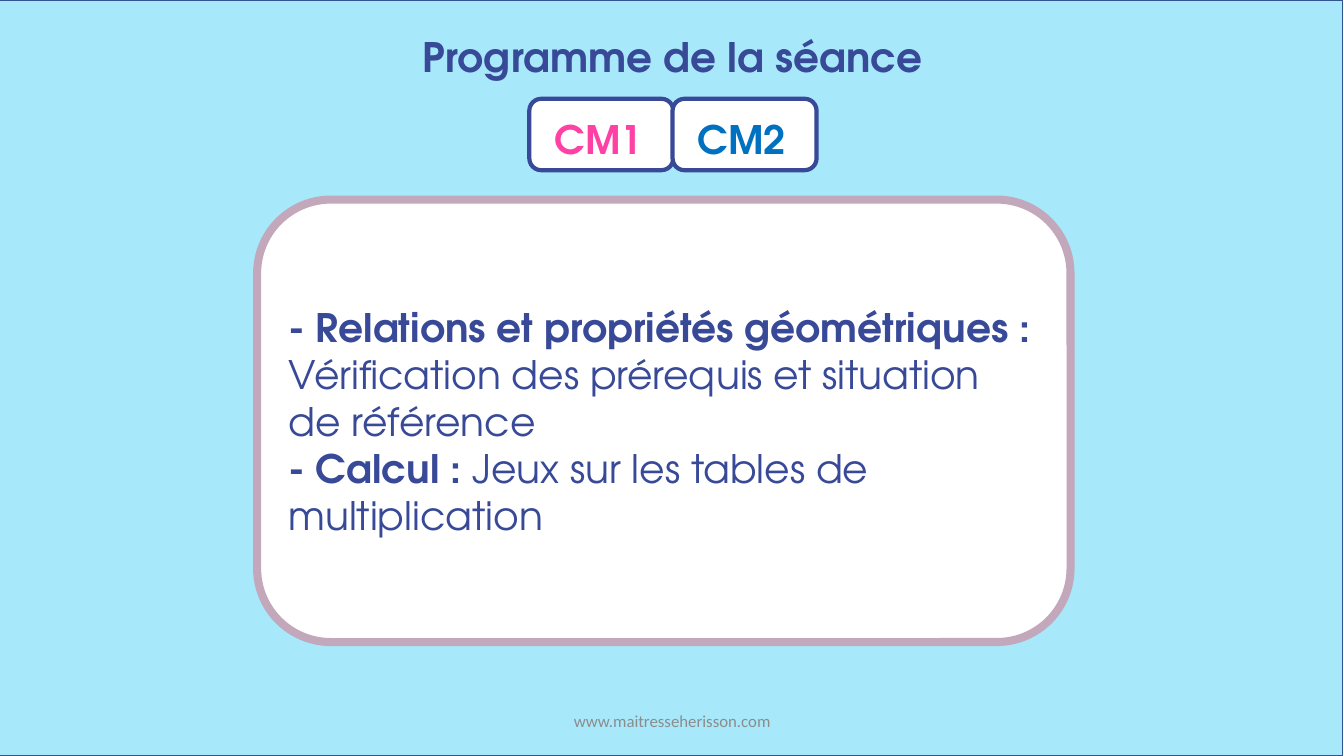
from pptx import Presentation
from pptx.dml.color import RGBColor
from pptx.enum.shapes import MSO_SHAPE as SHAPE
from pptx.enum.text import MSO_ANCHOR as ANCHOR, PP_ALIGN as ALIGN
from pptx.util import Cm, Pt

SKY = RGBColor(0xA7, 0xE8, 0xFB)
EDGE = RGBColor(0x32, 0x54, 0x91)
WHITE = RGBColor(0xFF, 0xFF, 0xFF)
INDIGO = RGBColor(0x37, 0x49, 0x97)
MAUVE = RGBColor(0xC3, 0xA7, 0xBA)
PINK = RGBColor(0xFF, 0x41, 0xA5)
BLUE = RGBColor(0x00, 0x70, 0xC0)
GREY = RGBColor(0x8C, 0x8C, 0x8C)
ADVENTOR = "TeX Gyre Adventor"

LEVELS = [("CM1", PINK), ("CM2", BLUE)]
PROGRAMME = [
    ("- Relations et propriétés géométriques : ",
     "Vérification des prérequis et situation de référence"),
    ("- Calcul : ", "Jeux sur les tables de multiplication"),
]


def add_panel(s, kind, box, fill, line, width):
    """Add a filled, outlined shape without shadow."""
    sp = s.shapes.add_shape(kind, *map(Cm, box))
    sp.shadow.inherit = False
    sp.fill.solid()
    sp.fill.fore_color.rgb = fill
    sp.line.color.rgb = line
    sp.line.width = Pt(width)
    return sp


def add_run(p, text, size, color, bold=True, font=ADVENTOR):
    """Add one formatted run to a paragraph."""
    r = p.add_run()
    r.text = text
    r.font.name = font
    r.font.size = Pt(size)
    r.font.bold = bold
    r.font.color.rgb = color


def add_label(s, box, text, size, color, align=ALIGN.LEFT, anchor=ANCHOR.TOP, **style):
    """Add a text box holding a single line."""
    tf = s.shapes.add_textbox(*map(Cm, box)).text_frame
    tf.word_wrap = True
    tf.vertical_anchor = anchor
    p = tf.paragraphs[0]
    p.alignment = align
    add_run(p, text, size, color, **style)


def add_level(s, left, name, color):
    """Add a class level badge."""
    add_panel(s, SHAPE.ROUNDED_RECTANGLE, (left, 2.49, 3.63, 1.8), WHITE, INDIGO, 3)
    add_label(s, (left + 0.39, 2.77, 2.8, 1.45), name, 28, color)


def add_programme(s, items):
    """Add the rounded panel listing each subject and its activity."""
    sp = add_panel(s, SHAPE.ROUNDED_RECTANGLE, (6.48, 5.03, 20.5, 11.15), WHITE, MAUVE, 5.75)
    tf = sp.text_frame
    tf.word_wrap = True
    tf.vertical_anchor = ANCHOR.MIDDLE
    for i, (subject, activity) in enumerate(items):
        p = tf.add_paragraph() if i else tf.paragraphs[0]
        p.alignment = ALIGN.LEFT
        add_run(p, subject, 28, INDIGO)
        add_run(p, activity, 28, INDIGO, bold=False)


def main():
    """Build the session programme slide."""
    prs = Presentation()
    prs.slide_width, prs.slide_height = Cm(33.87), Cm(19.05)
    s = prs.slides.add_slide(prs.slide_layouts[6])
    add_panel(s, SHAPE.RECTANGLE, (-0.03, 0, 33.87, 19.05), SKY, EDGE, 1)
    add_programme(s, PROGRAMME)
    add_label(s, (0.03, 0.69, 33.87, 1.5), "Programme de la séance", 29, INDIGO, ALIGN.CENTER)
    for i, (name, color) in enumerate(LEVELS):
        add_level(s, 13.34 + 3.61 * i, name, color)
    add_label(s, (11.23, 17.65, 11.43, 1.02), "www.maitresseherisson.com", 12, GREY,
              ALIGN.CENTER, ANCHOR.MIDDLE, bold=False, font="Calibri")
    prs.save("out.pptx")


if __name__ == "__main__":
    main()
